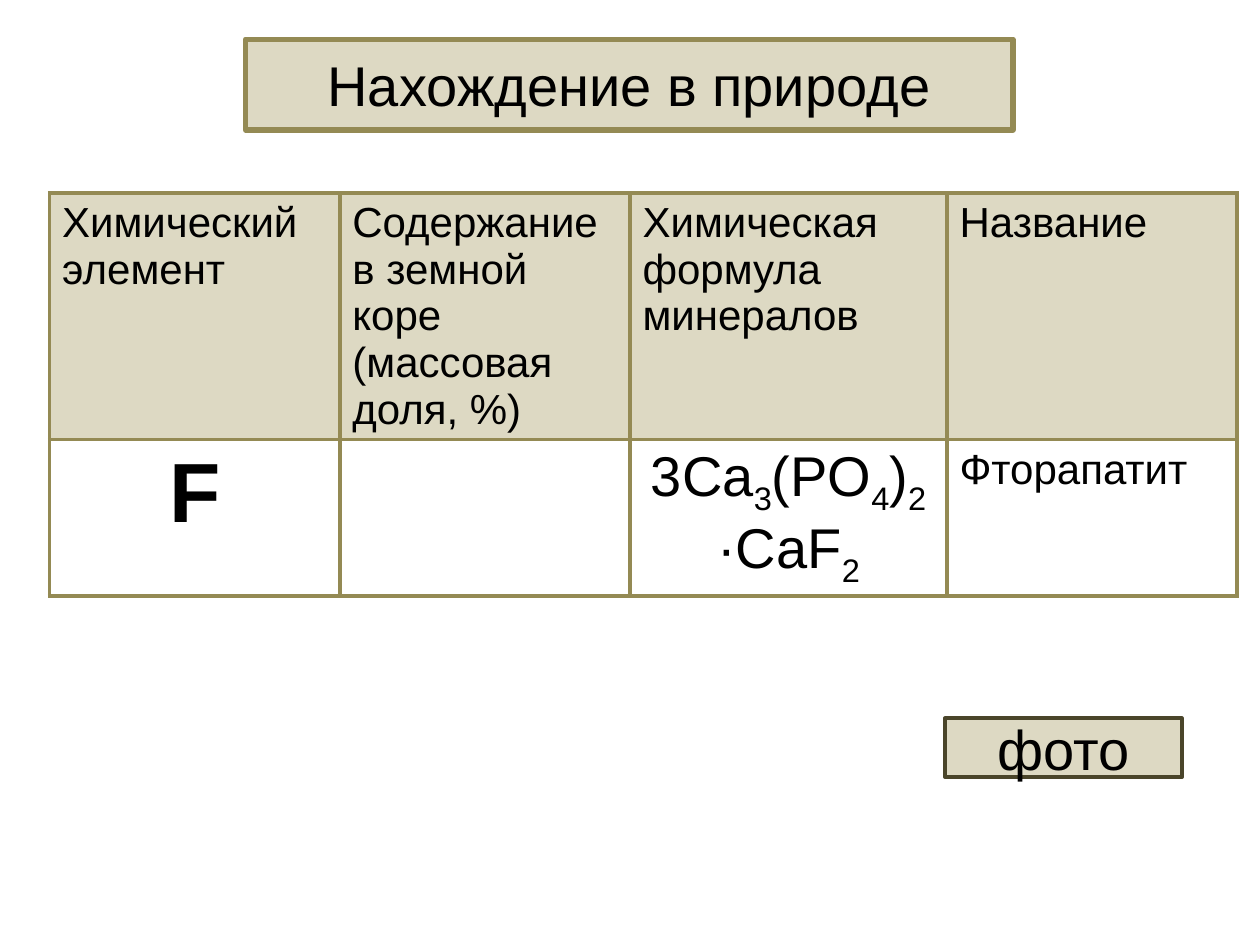
from lxml import etree
from pptx import Presentation
from pptx.dml.color import RGBColor
from pptx.enum.shapes import MSO_SHAPE
from pptx.enum.text import MSO_ANCHOR, MSO_AUTO_SIZE, PP_ALIGN
from pptx.oxml.ns import qn
from pptx.util import Cm, Pt

RECT = MSO_SHAPE.RECTANGLE
MIDDLE = MSO_ANCHOR.MIDDLE
NO_FIT = MSO_AUTO_SIZE.NONE
LEFT, CENTER = PP_ALIGN.LEFT, PP_ALIGN.CENTER
SAND, OLIVE, DARK, BLACK = "DDD9C3", "948A54", "4A452A", "000000"
HEADS = [
    "Химический элемент",
    "Содержание в земной коре (массовая доля, %)",
    "Химическая формула минералов",
    "Название",
]
FORMULA = "3Ca|3|(PO|4|)|2|·CaF|2"


def paint(fill, color):
    fill.solid()
    fill.fore_color.rgb = RGBColor.from_string(color)


def write(frame, text, size=24, bold=False, align=LEFT):
    para = frame.paragraphs[0]
    para.alignment = align
    for i, part in enumerate(text.split("|")):
        run = para.add_run()
        run.text = part
        run.font.name = "Arial"
        run.font.size = Pt(size)
        run.font.bold = bold
        paint(run.font.fill, BLACK)
        if i % 2:
            run._r.get_or_add_rPr().set("baseline", "-25000")


def panel(shape, box, text, edge, width):
    shape.left, shape.top, shape.width, shape.height = map(Cm, box)
    shape.shadow.inherit = False
    paint(shape.fill, SAND)
    paint(shape.line.fill, edge)
    shape.line.width = Pt(width)
    frame = shape.text_frame
    frame.word_wrap = True
    frame.auto_size = NO_FIT
    frame.vertical_anchor = MIDDLE
    write(frame, text, size=32, align=CENTER)


def border(cell, color, width):
    props = cell._tc.get_or_add_tcPr()
    for side in ("a:lnL", "a:lnR", "a:lnT", "a:lnB"):
        line = etree.SubElement(props, qn(side), w=str(Pt(width)))
        solid = etree.SubElement(line, qn("a:solidFill"))
        etree.SubElement(solid, qn("a:srgbClr"), val=color)


def minerals(slide, box, widths, heights):
    grid = slide.shapes.add_table(len(heights), len(widths), *map(Cm, box)).table
    grid.first_row = grid.horz_banding = False
    for col, width in zip(grid.columns, widths):
        col.width = Cm(width)
    for row, height in zip(grid.rows, heights):
        row.height = Cm(height)
    for cell in grid.iter_cells():
        border(cell, OLIVE, 2.25)
        cell.fill.background()
    for i, head in enumerate(HEADS):
        cell = grid.cell(0, i)
        paint(cell.fill, SAND)
        write(cell.text_frame, head)
    write(grid.cell(1, 0).text_frame, "F", size=48, bold=True, align=CENTER)
    write(grid.cell(1, 2).text_frame, FORMULA, size=32, align=CENTER)
    write(grid.cell(1, 3).text_frame, "Фторапатит")


def main():
    deck = Presentation()
    deck.slide_width, deck.slide_height = Cm(25.4), Cm(19.05)
    slide = deck.slides.add_slide(deck.slide_layouts[5])
    panel(slide.shapes.title, (4.95, 0.79, 15.47, 1.83),
          "Нахождение в природе", OLIVE, 3)
    minerals(slide, (1, 3.89, 23.94, 8.1), (5.85, 5.85, 6.39, 5.85), (4.95, 3.15))
    photo = (19.05, 14.48, 4.78, 1.19)
    panel(slide.shapes.add_shape(RECT, *map(Cm, photo)), photo, "фото", DARK, 2)
    deck.save("out.pptx")


if __name__ == "__main__":
    main()
